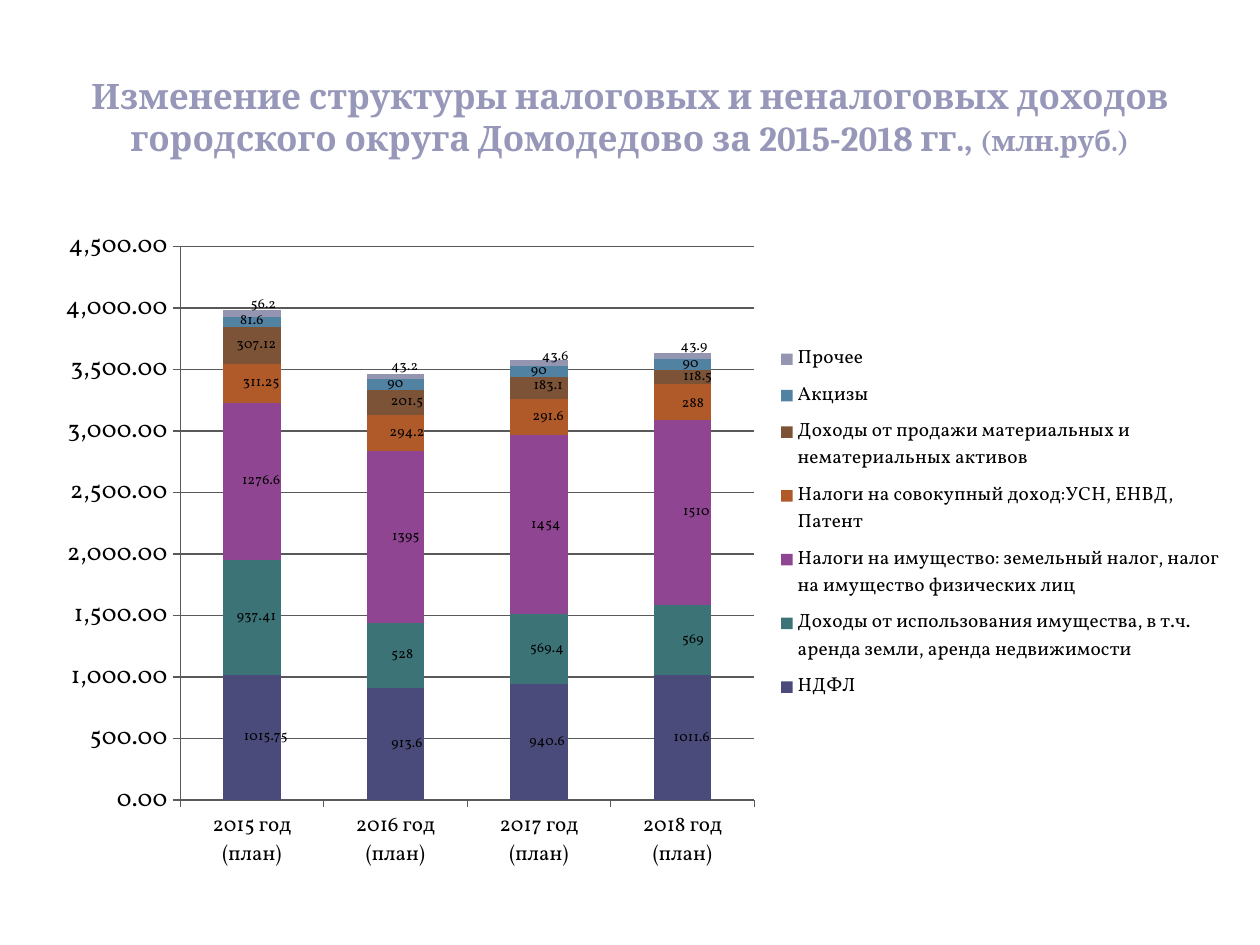
from pptx import Presentation, util as u
from pptx.chart.data import CategoryChartData
from pptx.dml.color import RGBColor
from pptx.enum import chart as ch, text
from pptx.oxml import parse_xml
from pptx.oxml.ns import nsdecls

COLORS = {"title": "9798B9", "text": "000000", "grid": "595959"}
YEARS = [f"{year} год (план)" for year in range(2015, 2019)]
# name, colour, values, label shifts right and down in thousandths of the chart
REVENUES = [
    ("НДФЛ", "4A4B7A", (1015.75, 913.6, 940.6, 1011.6), (12, 10, 7, 8), (0, 0, 0, 0)),
    ("Доходы от использования имущества, в т.ч. аренда земли, аренда недвижимости",
     "3C7377", (937.41, 528, 569.4, 569), (4, 6, 7, 9), (0, 0, 0, 0)),
    ("Налоги на имущество: земельный налог, налог на имущество физических лиц",
     "8F4591", (1276.6, 1395, 1454, 1510), (8, 9, 6, 12), (0, 0, 0, 0)),
    ("Налоги на совокупный доход:УСН, ЕНВД, Патент",
     "AF5A28", (311.25, 294.2, 291.6, 288), (8, 10, 8, 9), (0, 0, 0, 4)),
    ("Доходы от продажи материальных и нематериальных активов",
     "7C5337", (307.12, 201.5, 183.1, 118.5), (4, 10, 8, 13), (0, 0, -3, 0)),
    ("Акцизы", "5282A2", (81.6, 90, 90, 90), (0, 0, 0, 7), (0, 0, 0, 0)),
    ("Прочее", "9495B1", (56.2, 43.2, 43.6, 43.9), (10, 8, 14, 10), (-12, -14, -9, -14)),
]


def rgb(value):
    return RGBColor.from_string(value)


def layout(target=None, **places):
    """Return a manual chart layout."""
    inner = f'<c:layoutTarget val="{target}"/>' if target else ""
    if target or "w" in places:
        inner += '<c:xMode val="edge"/><c:yMode val="edge"/>'
    inner += "".join(f'<c:{key} val="{val}"/>' for key, val in places.items())
    return parse_xml(f'<c:layout {nsdecls("c")}><c:manualLayout>{inner}'
                     "</c:manualLayout></c:layout>")


class Deck:
    """Style and current slide."""

    title_font, chart_font = "Cambria", "Vollkorn"

    def __init__(self, prs):
        self.s = prs.slides.add_slide(prs.slide_layouts[6])

    def style(self, font, size, name, color):
        font.size, font.name = u.Pt(size), name
        font.color.rgb = rgb(color)

    def title(self, box, runs):
        tf = self.s.shapes.add_textbox(*map(u.Cm, box)).text_frame
        tf.word_wrap = True
        tf.vertical_anchor = text.MSO_ANCHOR.MIDDLE
        p = tf.paragraphs[0]
        p.alignment = text.PP_ALIGN.CENTER
        for words, size in runs:
            r = p.add_run()
            r.text = words
            r.font.bold = True
            self.style(r.font, size, self.title_font, COLORS["title"])

    def axis(self, axis, size):
        self.style(axis.tick_labels.font, size, self.chart_font, COLORS["text"])
        axis.major_tick_mark = ch.XL_TICK_MARK.OUTSIDE
        axis.minor_tick_mark = ch.XL_TICK_MARK.NONE
        self.line(axis.format.line)

    def line(self, line):
        line.color.rgb = rgb(COLORS["grid"])
        line.width = u.Pt(0.75)

    def labels(self, series, right, down):
        self.style(series.data_labels.font, 8, self.chart_font, COLORS["text"])
        series.data_labels.show_value = True
        for i, (dx, dy) in enumerate(zip(right, down)):
            if dx or dy:
                font = series.points[i].data_label.font
                self.style(font, 8, self.chart_font, COLORS["text"])
                idx = series._element.xpath(f"c:dLbls/c:dLbl/c:idx[@val='{i}']")[0]
                idx.addnext(layout(x=dx / 1000, y=dy / 1000))

    def stacked_chart(self, box, categories, rows):
        data = CategoryChartData()
        data.categories = categories
        for name, _, values, _, _ in rows:
            data.add_series(name, values)
        chart = self.s.shapes.add_chart(
            ch.XL_CHART_TYPE.COLUMN_STACKED, *map(u.Cm, box), data).chart
        self.style(chart.font, 18, self.chart_font, COLORS["text"])
        chart.has_title = False

        self.axis(chart.category_axis, 12)
        value_axis = chart.value_axis
        self.axis(value_axis, 14)
        value_axis.minimum_scale, value_axis.maximum_scale = 0, 4500
        value_axis.major_unit = 500
        value_axis.tick_labels.number_format = "#,##0.00"
        value_axis.tick_labels.number_format_is_linked = False
        self.line(value_axis.major_gridlines.format.line)

        chart.has_legend = True
        legend = chart.legend
        legend.position = ch.XL_LEGEND_POSITION.RIGHT
        legend.include_in_layout = False
        self.style(legend.font, 11, self.chart_font, COLORS["text"])

        plot = chart.plots[0]
        plot.gap_width, plot.overlap = 150, 100
        plot.vary_by_categories = False
        for series, (_, color, _, right, down) in zip(plot.series, rows):
            series.format.fill.solid()
            series.format.fill.fore_color.rgb = rgb(color)
            self.labels(series, right, down)

        area = chart._chartSpace.chart.plotArea
        for old in area.xpath("c:layout"):
            area.remove(old)
        area.insert(0, layout("inner", x=0.1, y=0.04, w=0.49, h=0.86))
        key = legend._element
        for old in key.xpath("c:layout"):
            key.remove(old)
        key.xpath("c:legendPos")[0].addnext(layout(x=0.61, y=0.18, w=0.38, h=0.58))


def main():
    prs = Presentation()
    prs.slide_width, prs.slide_height = u.Cm(25.4), u.Cm(19.05)
    deck = Deck(prs)
    deck.title((1.27, 0.76, 22.86, 3.18), [
        ("Изменение структуры налоговых и неналоговых доходов городского округа "
         "Домодедово за 2015-2018 гг., ", 20),
        ("(млн.руб.)", 16)])
    deck.stacked_chart((1.27, 4.45, 23.62, 13.08), YEARS, REVENUES)
    prs.save("out.pptx")


if __name__ == "__main__":
    main()
